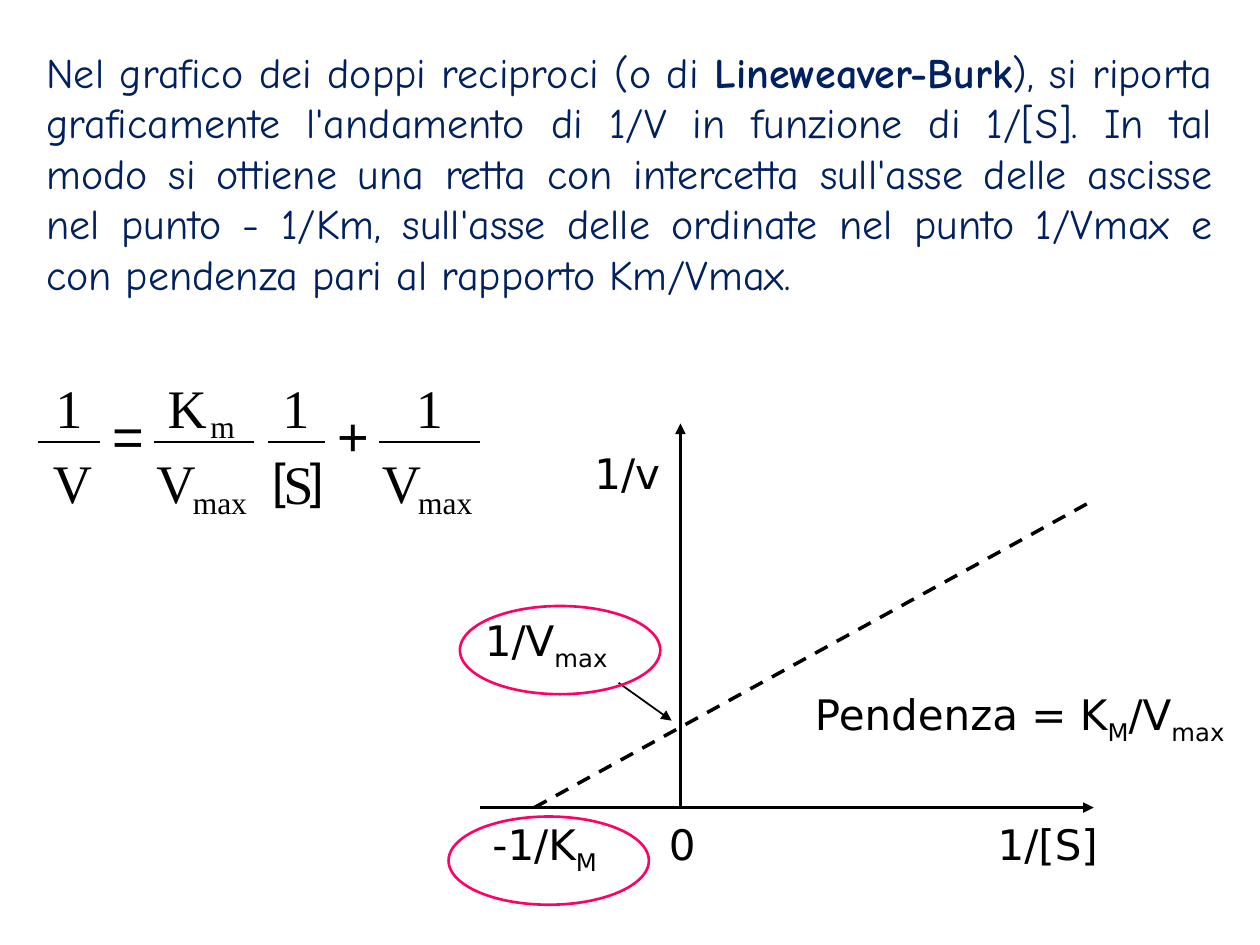
from lxml.etree import SubElement
from pptx import Presentation
from pptx.dml.color import RGBColor
from pptx.enum.dml import MSO_LINE
from pptx.enum.shapes import MSO_CONNECTOR, MSO_SHAPE
from pptx.enum.text import MSO_ANCHOR, MSO_AUTO_SIZE, PP_ALIGN
from pptx.oxml.ns import qn
from pptx.util import Pt

COLORS = {"ink": "000000", "prose": "002060", "ring": "FF0066"}
LABEL = {"size": Pt(24), "name": "DejaVu Sans"}
PROSE = {"size": Pt(24), "name": "Comic Neue"}
SYMBOL = {"size": Pt(31), "name": "Times New Roman"}
SUBSCRIPT = {"size": Pt(18), "name": "Times New Roman"}
OPERATOR = {"size": Pt(31), "name": "Arial"}
BRACKET = {"size": Pt(28), "name": "Arial"}


class Board:
    """Draws styled elements into the current group of a slide."""

    def __init__(self, slide):
        self.slide = slide
        self.shapes = slide.shapes

    def start_group(self):
        self.shapes = self.slide.shapes.add_group_shape().shapes

    def line(self, start, end, width, dash=None, arrow=None):
        points = [Pt(value) for value in (*start, *end)]
        connector = self.shapes.add_connector(MSO_CONNECTOR.STRAIGHT, *points)
        connector.line.color.rgb = RGBColor.from_string(COLORS["ink"])
        connector.line.width = Pt(width)
        if dash:
            connector.line.dash_style = dash
        properties = connector._element.spPr
        if arrow:
            SubElement(properties.find(qn("a:ln")), qn(f"a:{arrow}"), type="triangle")
        SubElement(properties, qn("a:effectLst"))

    def ring(self, left, top, width, height):
        oval = self.shapes.add_shape(MSO_SHAPE.OVAL, Pt(left), Pt(top), Pt(width), Pt(height))
        oval.shadow.inherit = False
        oval.fill.background()
        oval.line.color.rgb = RGBColor.from_string(COLORS["ring"])
        oval.line.width = Pt(1.5)

    def text(self, box, parts, style, color="ink", wrap=False, inset=None,
             align=None, anchor=MSO_ANCHOR.TOP, accent="subscript"):
        frame = self.shapes.add_textbox(*map(Pt, box)).text_frame
        settings = {"word_wrap": wrap, "auto_size": MSO_AUTO_SIZE.SHAPE_TO_FIT_TEXT,
                    "vertical_anchor": anchor}
        if inset is not None:
            for side in ("left", "right", "top", "bottom"):
                settings[f"margin_{side}"] = Pt(inset)
        for name, value in settings.items():
            setattr(frame, name, value)
        paragraph = frame.paragraphs[0]
        paragraph.alignment = align
        for index, part in enumerate(parts):
            run = paragraph.add_run()
            run.text = part
            for name, value in style.items():
                setattr(run.font, name, value)
            run.font.color.rgb = RGBColor.from_string(COLORS[color])
            if index % 2 and accent == "bold":
                run.font.bold = True
            elif index % 2:
                run.font._element.set("baseline", "-25000")

    def glyph(self, character, left, top, width, style):
        height = style["size"].pt * 1.2
        self.text((left, top, width, height), [character], style, inset=0)


def draw_graph(board):
    origin_x, origin_y = 388.8, 461.5
    board.start_group()
    board.line((origin_x, 242), (origin_x, origin_y), 2, arrow="headEnd")
    board.line((274.3, origin_y), (625, origin_y), 2, arrow="tailEnd")
    board.line((305.3, origin_y), (625, 285.8), 2, dash=MSO_LINE.DASH)
    labels = [
        (563, 464.4, 78.5, ["1/[S]"]),
        (332.6, 252, 54.7, ["1/v"]),
        (274.3, 464.4, 81.4, ["-1/K", "M"]),
        (375.1, 464.4, 29.5, ["0"]),
        (458.6, 390.2, 258.5, ["Pendenza = K", "M", "/V", "max"]),
    ]
    for left, top, width, parts in labels:
        board.text((left, top, width, 36), parts, LABEL)
    board.text((270, 347.8, 103, 36), ["1/V", "max"], LABEL, wrap=True)
    board.line((353.5, 390.2), (383.8, 411.8), 1, arrow="tailEnd")
    for left, top in ((256.3, 466.6), (262.8, 346.3)):
        board.ring(left, top, 114.5, 50.4)


def draw_equation(board):
    bar_y, numerator_y, denominator_y = 252.7, 213.8, 257
    board.start_group()
    for left, right in ((21.6, 56.9), (87.8, 145.4), (153.4, 185.8), (216.7, 274.3)):
        board.line((left, bar_y), (right, bar_y), 1.25)
    for character, left, width in (("1", 31.7, 15.8), ("K", 95.8, 22.3),
                                   ("1", 161.3, 15.8), ("1", 237.6, 15.8)):
        board.glyph(character, left, numerator_y, width, SYMBOL)
    for character, left, width in (("V", 30.2, 22.3), ("V", 89.3, 22.3),
                                   ("S", 162, 17.3), ("V", 218.2, 22.3)):
        board.glyph(character, left, denominator_y, width, SYMBOL)
    for character, left in (("[", 155.5), ("]", 177.1)):
        board.glyph(character, left, 256.7, 7.9, BRACKET)
    for word, left, top, width in (("m", 120.2, 232.6, 13.7), ("max", 110.2, 275.8, 31),
                                   ("max", 239, 275.8, 31)):
        board.glyph(word, left, top, width, SUBSCRIPT)
    for character, left in (("=", 64.1), ("+", 193)):
        board.glyph(character, left, 229.7, 17.3, OPERATOR)


def main():
    presentation = Presentation()
    presentation.slide_width, presentation.slide_height = Pt(720), Pt(540)
    board = Board(presentation.slides.add_slide(presentation.slide_layouts[6]))
    explanation = [
        "Nel grafico dei doppi reciproci (o di ",
        "Lineweaver-Burk",
        "), si riporta graficamente l'andamento di 1/V in funzione di 1/[S]. "
        "In tal modo si ottiene una retta con intercetta sull'asse delle ascisse "
        "nel punto - 1/Km, sull'asse delle ordinate nel punto 1/Vmax e con "
        "pendenza pari al rapporto Km/Vmax.",
    ]
    board.text((19.4, 7.9, 680.4, 181.4), explanation, PROSE, color="prose", wrap=True,
               align=PP_ALIGN.JUSTIFY, anchor=MSO_ANCHOR.MIDDLE, accent="bold")
    draw_graph(board)
    draw_equation(board)
    presentation.save("out.pptx")


if __name__ == "__main__":
    main()
